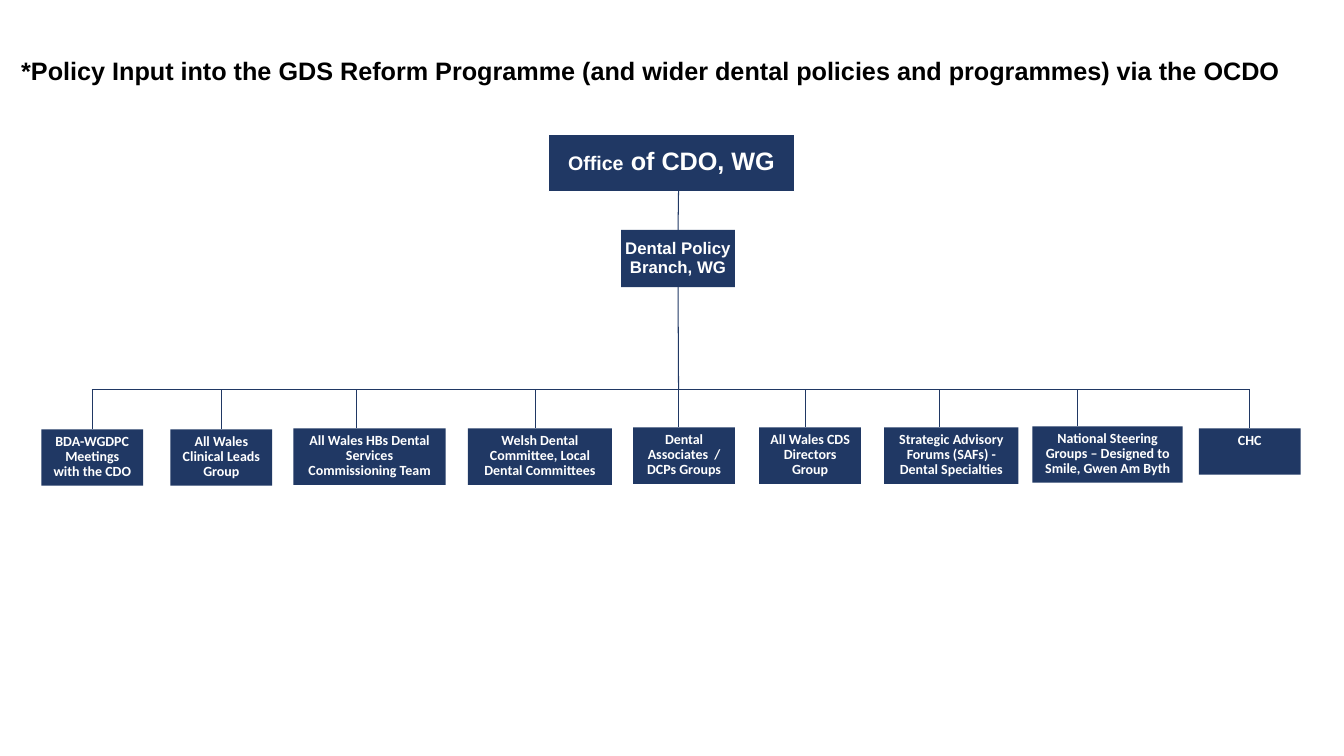
from dataclasses import dataclass

from lxml import etree
from pptx import Presentation
from pptx.dml.color import RGBColor
from pptx.enum.shapes import MSO_CONNECTOR as Connector, MSO_SHAPE as Shape
from pptx.enum.text import MSO_ANCHOR as Anchor, MSO_AUTO_SIZE as AutoSize, PP_ALIGN as Align
from pptx.oxml.ns import qn
from pptx.util import Inches, Pt


@dataclass(frozen=True)
class Theme:
    navy: RGBColor = RGBColor(0x20, 0x38, 0x64)
    white: RGBColor = RGBColor(0xFF, 0xFF, 0xFF)
    black: RGBColor = RGBColor(0, 0, 0)
    heading_font: str = "Arial"
    group_font: str = "Calibri"
    heading_size: int = 18
    office_size: int = 14
    branch_size: int = 12
    group_size: int = 10
    line_width: float = 0.75
    border_width: float = 1


TITLE = ("*Policy Input into the GDS Reform Programme "
         "(and wider dental policies and programmes) via the OCDO")
BUS_Y = 3.86
TRUNK_X = 6.73
GROUP_HEIGHT = 0.56
JOIN_TOLERANCE = 0.03

# Wording, left, top, width, x of the line down from the bus
GROUPS = [
    ("BDA-WGDPC Meetings with the CDO", 0.41, 4.26, 1.01, 0.93),
    ("All Wales Clinical Leads Group", 1.69, 4.26, 1.01, 2.21),
    ("All Wales HBs Dental Services Commissioning Team", 2.91, 4.25, 1.51, 3.54),
    ("Welsh Dental Committee, Local Dental Committees", 4.64, 4.25, 1.43, 5.31),
    ("Dental Associates  / DCPs Groups", 6.28, 4.24, 1.01, TRUNK_X),
    ("All Wales CDS Directors Group", 7.53, 4.24, 1.01, 7.99),
    ("Strategic Advisory Forums (SAFs) - Dental Specialties", 8.77, 4.24, 1.33, 9.32),
    ("National Steering Groups – Designed to Smile, Gwen Am Byth", 10.24, 4.23, 1.49, 10.69),
    ("CHC", 11.89, 4.25, 1.01, 12.4),
]


def apply(target, values):
    for name, value in values.items():
        setattr(target, name, value)


class OrgChart:
    def __init__(self, page, theme):
        self.page = page
        self.theme = theme

    def add_span(self, para, wording, size, font, colour):
        span = para.add_run()
        span.text = wording
        apply(span.font, {"size": Pt(size), "name": font, "bold": True})
        span.font.color.rgb = colour

    def title(self, wording, left, top, width, height):
        title = self.page.shapes.title
        apply(title, {"left": Inches(left), "top": Inches(top),
                      "width": Inches(width), "height": Inches(height)})
        apply(title.text_frame, {"word_wrap": False, "auto_size": AutoSize.NONE,
                                 "vertical_anchor": Anchor.TOP})
        para = title.text_frame.paragraphs[0]
        para.alignment = Align.LEFT
        self.add_span(para, wording, self.theme.heading_size,
                      self.theme.heading_font, self.theme.black)

    def box(self, spans, font, left, top, width, height,
            anchor=Anchor.MIDDLE, inset=None, border=None):
        """Draw a navy box; spans is a list of (wording, size)."""
        box = self.page.shapes.add_shape(Shape.RECTANGLE, Inches(left), Inches(top),
                                         Inches(width), Inches(height))
        box.shadow.inherit = False
        box.fill.solid()
        box.fill.fore_color.rgb = self.theme.navy
        if border is None:
            box.line.fill.background()
        else:
            box.line.color.rgb = border
            box.line.width = Pt(self.theme.border_width)
        frame = box.text_frame
        apply(frame, {"word_wrap": True, "vertical_anchor": anchor})
        if inset is not None:
            sides = ("left", "top", "right", "bottom")
            apply(frame, {f"margin_{side}": Inches(inset) for side in sides})
        para = frame.paragraphs[0]
        apply(para, {"alignment": Align.CENTER, "line_spacing": 0.9})
        for wording, size in spans:
            self.add_span(para, wording, size, font, self.theme.white)
        return box

    def line(self, x1, y1, x2, y2):
        line = self.page.shapes.add_connector(Connector.STRAIGHT, Inches(x1), Inches(y1),
                                              Inches(x2), Inches(y2))
        line.line.color.rgb = self.theme.navy
        line.line.width = Pt(self.theme.line_width)
        etree.SubElement(line._element.spPr, qn("a:effectLst"))
        return line

    def group(self, wording, left, top, width, line_x):
        """Draw a group box with its line down from the bus."""
        height = 0.46 if wording == "CHC" else GROUP_HEIGHT
        box = self.box([(wording, self.theme.group_size)], self.theme.group_font,
                       left, top, width, height, anchor=Anchor.TOP)
        drop = self.line(line_x, BUS_Y, line_x, top)
        if abs(left + width / 2 - line_x) < JOIN_TOLERANCE:
            drop.begin_x = box.left + box.width // 2
            drop.end_connect(box, 0)


def main():
    deck = Presentation()
    deck.slide_width, deck.slide_height = Inches(13.33), Inches(7.5)
    theme = Theme()
    chart = OrgChart(deck.slides.add_slide(deck.slide_layouts[5]), theme)

    chart.title(TITLE, 0.11, 0.5, 12.81, 0.4)
    chart.box([("Office", theme.office_size), (" of CDO, WG", theme.heading_size)],
              theme.heading_font, 5.44, 1.33, 2.44, 0.57, inset=0.01, border=theme.white)
    branch = chart.box([("Dental Policy Branch, WG", theme.branch_size)],
                       theme.heading_font, 6.16, 2.28, 1.13, 0.57, inset=0.01)
    chart.line(TRUNK_X, 1.89, TRUNK_X, 2.28).end_connect(branch, 0)
    chart.line(TRUNK_X, 2.85, TRUNK_X, BUS_Y).begin_connect(branch, 2)
    chart.line(0.91, BUS_Y, 12.4, BUS_Y)
    for group in GROUPS:
        chart.group(*group)

    deck.save("out.pptx")


if __name__ == "__main__":
    main()
